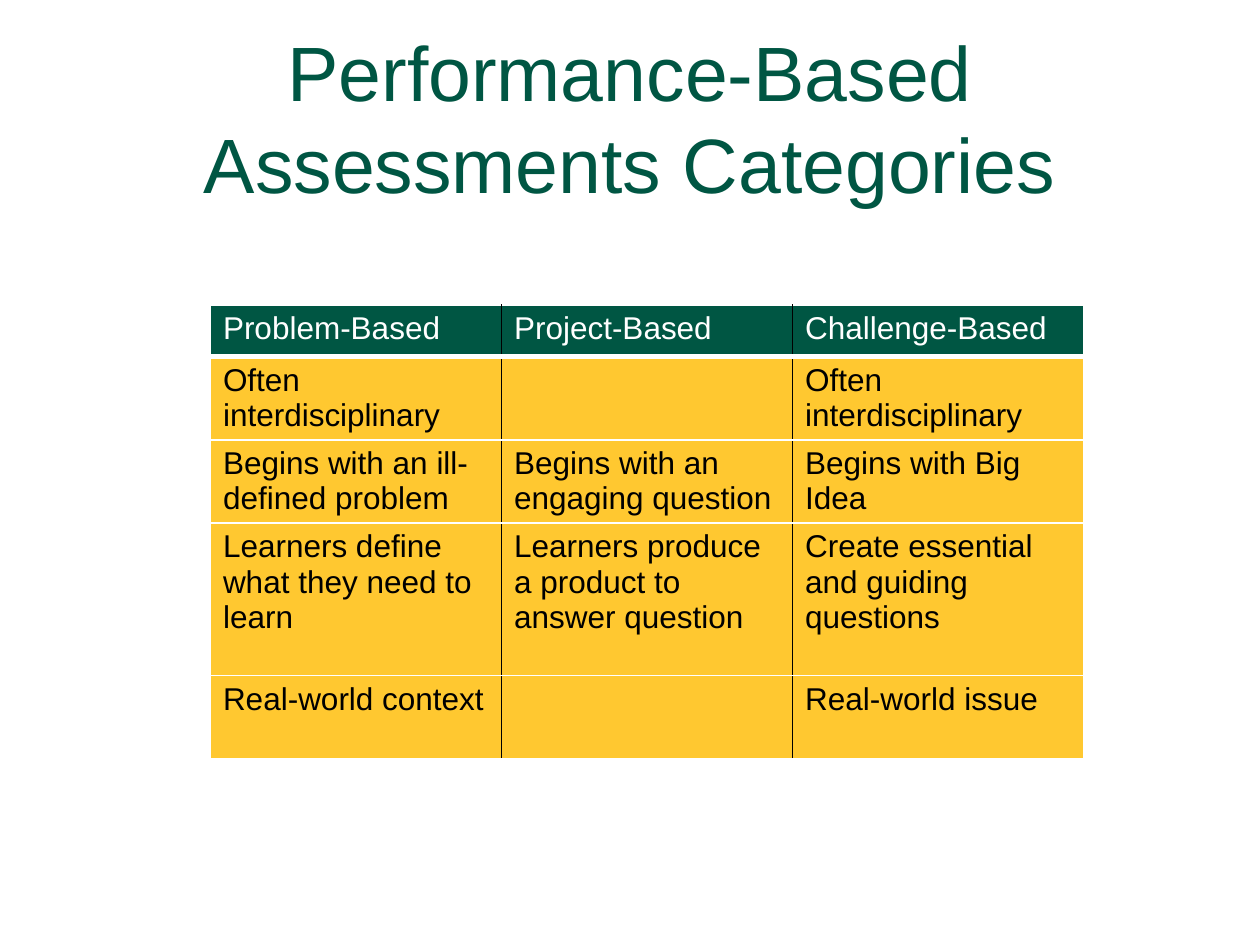
from lxml.etree import SubElement
from pptx import Presentation
from pptx.dml.color import RGBColor
from pptx.enum.text import MSO_ANCHOR, MSO_AUTO_SIZE, PP_ALIGN
from pptx.oxml.ns import qn
from pptx.util import Inches, Pt

GREEN, GOLD, WHITE, BLACK = "005643", "FFC830", "FFFFFF", "000000"
HEIGHTS = [0.41, 0.66, 0.66, 1.21, 0.66]
ROWS = [
    ["Problem-Based", "Project-Based", "Challenge-Based"],
    ["Often interdisciplinary", "", "Often interdisciplinary"],
    ["Begins with an ill-defined problem", "Begins with an engaging question",
     "Begins with Big Idea"],
    ["Learners define what they need to learn",
     "Learners produce a product to answer question",
     "Create essential and guiding questions"],
    ["Real-world context", "", "Real-world issue"],
]


def color(code):
    """Turn a hex string into a colour."""
    return RGBColor.from_string(code)


class Deck:
    """Hold the text style and the current slide."""

    def __init__(self, slide, face="Arial"):
        """Keep the slide and the typeface."""
        self.slide = slide
        self.face = face

    def style(self, frame, size, code):
        """Format all text in a frame."""
        for para in frame.paragraphs:
            for font in [para.font] + [run.font for run in para.runs]:
                font.name = self.face
                font.size = Pt(size)
                font.color.rgb = color(code)

    def title(self, text, left, top, width, height):
        """Fill and place the title."""
        shape = self.slide.shapes.title
        shape.left, shape.top = Inches(left), Inches(top)
        shape.width, shape.height = Inches(width), Inches(height)
        frame = shape.text_frame
        frame.text = text
        frame.word_wrap = True
        frame.auto_size = MSO_AUTO_SIZE.NONE
        frame.vertical_anchor = MSO_ANCHOR.MIDDLE
        frame.paragraphs[0].alignment = PP_ALIGN.CENTER
        self.style(frame, 44, GREEN)

    def border(self, cell, side, code, width):
        """Draw one edge of a cell."""
        line = SubElement(cell._tc.get_or_add_tcPr(), qn("a:ln" + side), w=str(Pt(width)))
        fill = SubElement(line, qn("a:solidFill"))
        SubElement(fill, qn("a:srgbClr"), val=code)

    def cell(self, cell, text, head, first, last):
        """Write and paint one cell."""
        self.border(cell, "L", WHITE if first else BLACK, 1)
        self.border(cell, "R", WHITE if last else BLACK, 1)
        self.border(cell, "T", WHITE, 1)
        self.border(cell, "B", WHITE, 3 if head else 1)
        cell.fill.solid()
        cell.fill.fore_color.rgb = color(GREEN if head else GOLD)
        cell.text_frame.text = text
        self.style(cell.text_frame, 18, WHITE if head else BLACK)

    def table(self, rows, heights, left, top, wide):
        """Add the table with a header row."""
        count = len(rows[0])
        table = self.slide.shapes.add_table(
            len(rows), count, Inches(left), Inches(top),
            Inches(wide * count), Inches(sum(heights))).table
        for column in table.columns:
            column.width = Inches(wide)
        for i, (row, height) in enumerate(zip(rows, heights)):
            table.rows[i].height = Inches(height)
            for j, text in enumerate(row):
                self.cell(table.cell(i, j), text, i == 0, j == 0, j == count - 1)


def main():
    """Build and save the slide."""
    show = Presentation()
    show.slide_width, show.slide_height = Inches(10), Inches(7.5)
    deck = Deck(show.slides.add_slide(show.slide_layouts[5]))
    deck.title("Performance-Based Assessments Categories", 0.5, 0.3, 9, 1.25)
    deck.table(ROWS, HEIGHTS, 1.67, 2.42, 2.31)
    show.save("out.pptx")


if __name__ == "__main__":
    main()
